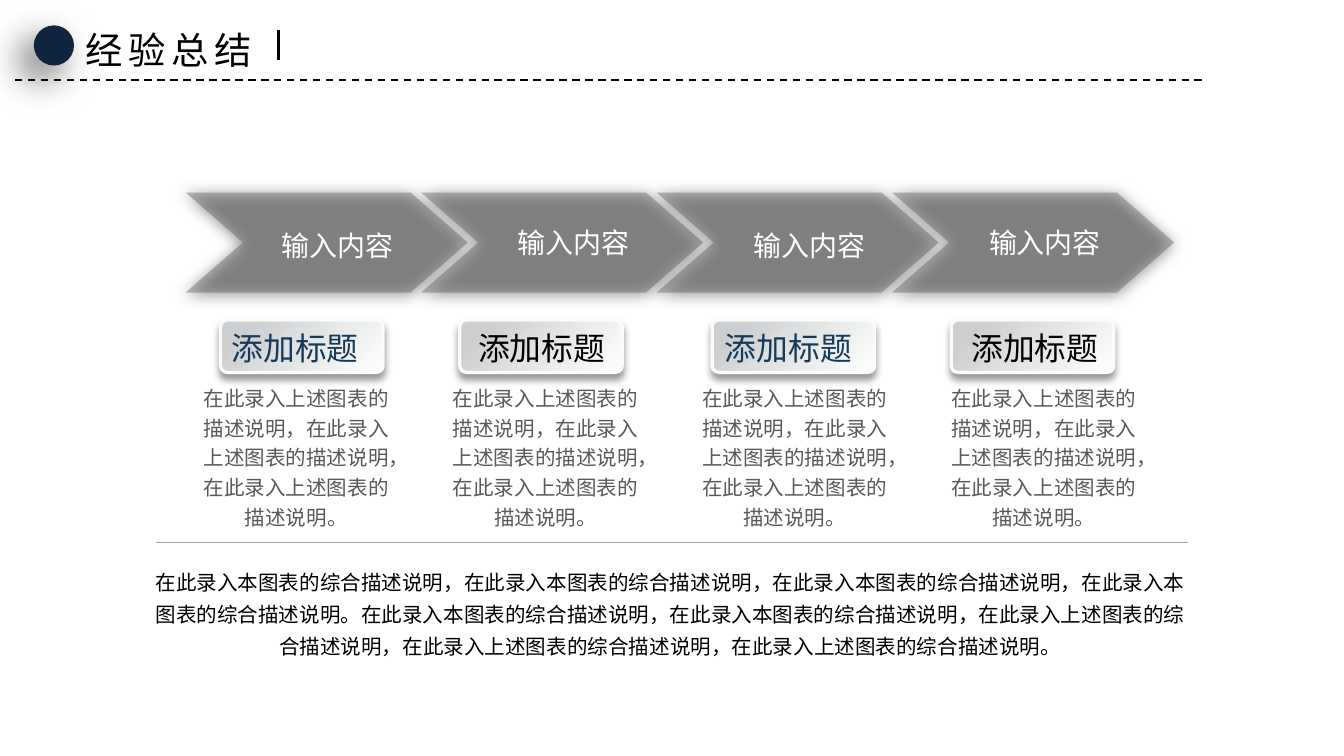
from dataclasses import dataclass

from lxml.etree import SubElement
from pptx import Presentation
from pptx.dml.color import RGBColor
from pptx.enum.dml import MSO_LINE_DASH_STYLE as Dash
from pptx.enum.shapes import MSO_CONNECTOR as Connector, MSO_SHAPE as Preset
from pptx.enum.text import MSO_ANCHOR as Anchor, MSO_AUTO_SIZE as AutoSize, PP_ALIGN as Align
from pptx.oxml.ns import qn
from pptx.util import Cm, Pt

COLORS = {
    "navy": "0F243E",
    "blue": "163A5A",
    "black": "000000",
    "white": "FFFFFF",
    "gray": "595959",
    "rule": "A5A5A5",
    "plate_dark": "CDCED0",
    "plate_light": "FAFCFB",
}
CJK_FONT = "Noto Sans CJK SC"
DESCRIPTION = "在此录入上述图表的描述说明，" * 2 + "在此录入上述图表的描述说明。"
SUMMARY = (
    "在此录入本图表的综合描述说明，在此录入本图表的综合描述说明，"
    "在此录入本图表的综合描述说明，在此录入本图表的综合描述说明。"
    "在此录入本图表的综合描述说明，在此录入本图表的综合描述说明，"
    "在此录入上述图表的综合描述说明，在此录入上述图表的综合描述说明，"
    "在此录入上述图表的综合描述说明。"
)


@dataclass
class Box:
    """A frame in centimetres."""
    left: float
    top: float
    width: float
    height: float

    def lengths(self) -> list:
        return [Cm(v) for v in (self.left, self.top, self.width, self.height)]


@dataclass
class TextStyle:
    size: float
    color: str
    font: str = CJK_FONT
    align: Align = Align.CENTER
    line_spacing: float = 1.0
    anchor: Anchor = Anchor.TOP
    margins: tuple = (0.18, 0.1)
    wrap: bool = True
    tracking: float = 0


@dataclass
class Shadow:
    opacity: int
    blur: float
    distance: float
    angle: int


@dataclass
class Step:
    plate_left: float
    label: Box
    label_spacing: float
    heading_color: str


PLATE_SHADOW = Shadow(40, 4, 3, 90)
ARROW_SHADOW = Shadow(100, 8.5, 1, 90)
DOT_SHADOW = Shadow(60, 20, 10, 135)

STEPS = [
    Step(4.17, Box(4.06, 4.09, 4.65, 0.97), 1.2, "blue"),
    Step(8.69, Box(8.59, 4.14, 4.5, 0.89), 1.0, "black"),
    Step(13.46, Box(13.08, 4.06, 4.45, 1.02), 1.2, "blue"),
    Step(17.98, Box(17.5, 4.14, 4.5, 0.89), 1.0, "black"),
]


def rgb(name: str) -> RGBColor:
    return RGBColor.from_string(COLORS[name])


def add_shadow(shape, shadow: Shadow) -> None:
    shape.shadow.inherit = False
    effects = shape._element.spPr.find(qn("a:effectLst"))
    outer = SubElement(effects, qn("a:outerShdw"), {
        "blurRad": str(Pt(shadow.blur)),
        "dist": str(Pt(shadow.distance)),
        "dir": str(shadow.angle * 60000),
        "algn": "ctr",
        "rotWithShape": "0",
    })
    color = SubElement(outer, qn("a:srgbClr"), val=COLORS["black"])
    SubElement(color, qn("a:alpha"), val=str(shadow.opacity * 1000))


def add_text(slide, box: Box, text: str, style: TextStyle) -> None:
    frame = slide.shapes.add_textbox(*box.lengths()).text_frame
    side, edge = (Cm(v) for v in style.margins)
    frame_format = {
        "margin_left": side, "margin_right": side,
        "margin_top": edge, "margin_bottom": edge,
        "word_wrap": style.wrap, "vertical_anchor": style.anchor,
        "auto_size": AutoSize.SHAPE_TO_FIT_TEXT,
    }
    for name, value in frame_format.items():
        setattr(frame, name, value)
    paragraph = frame.paragraphs[0]
    paragraph.alignment = style.align
    paragraph.line_spacing = style.line_spacing
    run = paragraph.add_run()
    run.text = text
    for name, value in {"name": style.font, "size": Pt(style.size)}.items():
        setattr(run.font, name, value)
    run.font.color.rgb = rgb(style.color)
    properties = run._r.get_or_add_rPr()
    SubElement(properties, qn("a:ea"), typeface=CJK_FONT)
    if style.tracking:
        properties.set("spc", str(int(style.tracking * 100)))


def add_line(slide, start: tuple, end: tuple, color: str, width: float, dash=None) -> None:
    line = slide.shapes.add_connector(Connector.STRAIGHT, *(Cm(v) for v in start + end))
    line.line.color.rgb = rgb(color)
    line.line.width = Pt(width)
    if dash:
        line.line.dash_style = dash
    SubElement(line._element.spPr, qn("a:effectLst"))


def add_plate(slide, left: float) -> None:
    plate = slide.shapes.add_shape(Preset.ROUNDED_RECTANGLE, *Box(left, 6.05, 3.07, 0.99).lengths())
    plate.adjustments[0] = 0.125
    plate.fill.gradient()
    plate.fill.gradient_angle = 315
    stops = ((0.15, "plate_dark"), (0.92, "plate_light"))
    for stop, (position, color) in zip(plate.fill.gradient_stops, stops):
        stop.position = position
        stop.color.rgb = rgb(color)
    plate.line.color.rgb = rgb("plate_light")
    plate.line.width = Pt(1.75)
    add_shadow(plate, PLATE_SHADOW)


def add_arrow(slide, box: Box, notch: float) -> None:
    right, bottom = box.left + box.width, box.top + box.height
    middle = box.top + box.height / 2
    outline = [
        (right - notch, box.top), (right, middle), (right - notch, bottom),
        (box.left, bottom), (box.left + notch, middle),
    ]
    builder = slide.shapes.build_freeform(Cm(box.left), Cm(box.top))
    builder.add_line_segments([(Cm(x), Cm(y)) for x, y in outline], close=True)
    arrow = builder.convert_to_shape()
    arrow.fill.solid()
    arrow.fill.fore_color.rgb = rgb("gray")
    color = arrow._element.spPr.find(qn("a:solidFill")).find(qn("a:srgbClr"))
    SubElement(color, qn("a:alpha"), val="40000")
    arrow.line.fill.background()
    add_shadow(arrow, ARROW_SHADOW)


def main() -> None:
    presentation = Presentation()
    presentation.slide_width, presentation.slide_height = Cm(25.4), Cm(14.29)
    slide = presentation.slides.add_slide(presentation.slide_layouts[6])

    # Heading plates lie behind everything else
    for step in STEPS:
        add_plate(slide, step.plate_left)

    # Arrow band with labels
    for index, step in enumerate(STEPS):
        add_arrow(slide, Box(3.51 + 4.45 * index, 3.64, 5.33, 1.89), 1.08)
        add_text(slide, step.label, "输入内容", TextStyle(
            15, "white", font="Arial", line_spacing=step.label_spacing,
            anchor=Anchor.MIDDLE, margins=(0.25, 0.13)))

    # Headings and descriptions
    for index, step in enumerate(STEPS):
        add_text(slide, Box(4.17 + 4.66 * index, 6.12, 2.82, 0.91), "添加标题",
                 TextStyle(17, step.heading_color, wrap=False))
        add_text(slide, Box(3.63 + 4.71 * index, 7.11, 3.94, 3.02), DESCRIPTION,
                 TextStyle(11, "gray", line_spacing=1.2))

    # Summary
    add_line(slide, (2.95, 10.26), (22.45, 10.26), "rule", 0.5)
    add_text(slide, Box(2.64, 10.54, 20.07, 2.03), SUMMARY,
             TextStyle(11, "black", line_spacing=1.3))

    # Slide title
    add_line(slide, (0.28, 1.52), (22.81, 1.52), "black", 1, Dash.DASH)
    dot = slide.shapes.add_shape(Preset.OVAL, *Box(0.64, 0.48, 0.76, 0.76).lengths())
    dot.fill.solid()
    dot.fill.fore_color.rgb = rgb("navy")
    dot.line.fill.background()
    add_shadow(dot, DOT_SHADOW)
    add_text(slide, Box(1.37, 0.38, 3.78, 1.12), "经验总结", TextStyle(
        20, "black", align=Align.LEFT, margins=(0.25, 0.13), wrap=False, tracking=3))
    add_line(slide, (5.26, 0.56), (5.26, 1.14), "black", 1.5)

    presentation.save("out.pptx")


if __name__ == "__main__":
    main()
